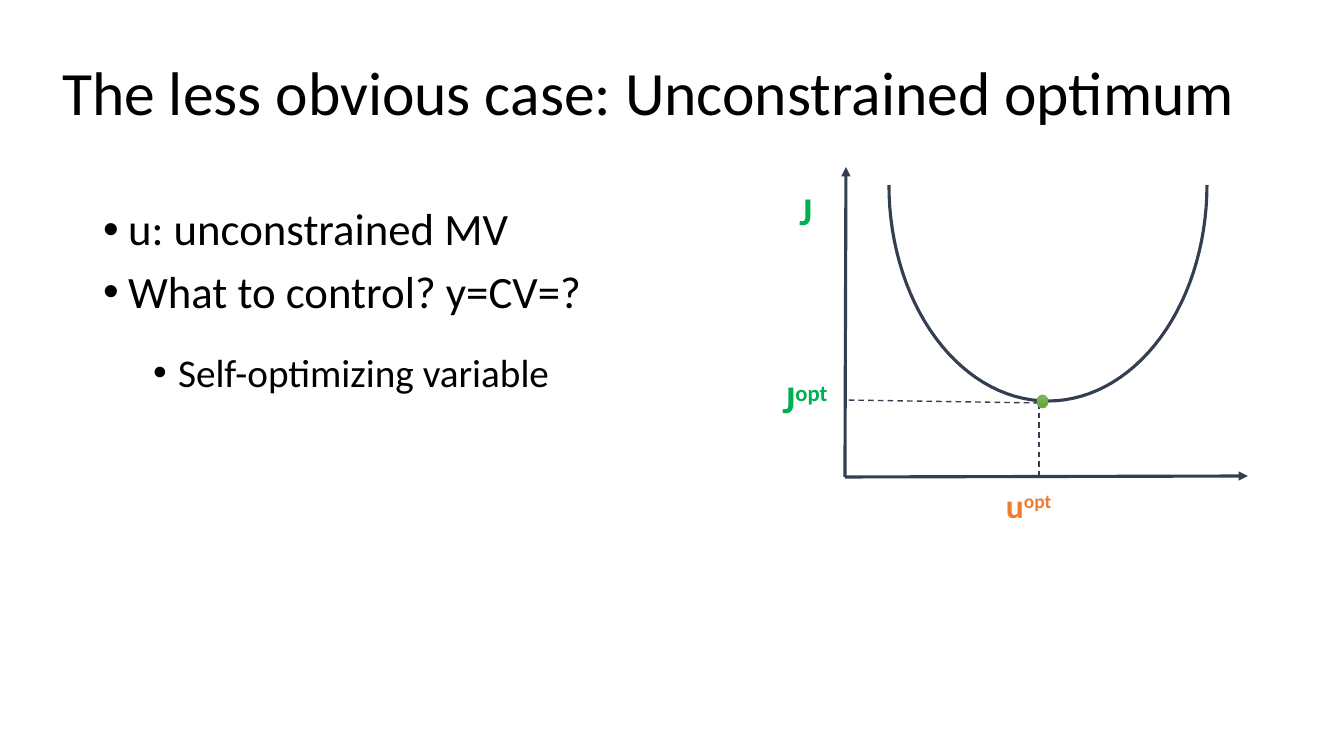
from math import cos, pi, sin

from lxml.etree import SubElement
from pptx import Presentation
from pptx.dml.color import RGBColor
from pptx.enum.dml import MSO_LINE_DASH_STYLE as Dash
from pptx.enum.shapes import MSO_CONNECTOR as Connector, MSO_SHAPE as Shape
from pptx.enum.text import MSO_ANCHOR as Anchor, MSO_AUTO_SIZE as AutoSize, PP_ALIGN as Align
from pptx.oxml.ns import qn
from pptx.util import Emu, Pt

BLACK = RGBColor(0x00, 0x00, 0x00)
NAVY = RGBColor(0x33, 0x3F, 0x50)
GREEN = RGBColor(0x00, 0xB0, 0x50)
ORANGE = RGBColor(0xED, 0x7D, 0x31)
DOT_EDGE = RGBColor(0x70, 0xAD, 0x47)
DOT_TOP = RGBColor(0x81, 0xB8, 0x61)
DOT_BOTTOM = RGBColor(0x62, 0xA3, 0x36)

EMU_PER_PX = 914400 / 100.8


def px(length):
    return Emu(round(length * EMU_PER_PX))


class SlideBuilder:
    font = "Calibri"

    def __init__(self, slide):
        self.slide = slide
        self.shapes = slide.shapes

    def add_run(self, paragraph, text, size, color, bold=False, raised=False):
        run = paragraph.add_run()
        run.text = text
        run.font.name = self.font
        run.font.size = Pt(size)
        run.font.bold = bold
        run.font.color.rgb = color
        if raised:
            run._r.get_or_add_rPr().set("baseline", "30000")

    def place(self, placeholder, left, top, width, height, anchor):
        placeholder.left, placeholder.top = px(left), px(top)
        placeholder.width, placeholder.height = px(width), px(height)
        frame = placeholder.text_frame
        frame.word_wrap = True
        frame.auto_size = AutoSize.NONE
        frame.vertical_anchor = anchor
        return frame

    def title(self, text, *box):
        paragraph = self.place(self.shapes.title, *box, Anchor.MIDDLE).paragraphs[0]
        paragraph.alignment = Align.LEFT
        paragraph.line_spacing = 0.9
        self.add_run(paragraph, text, 44, BLACK)

    def bullets(self, items, *box):
        frame = self.place(self.slide.placeholders[1], *box, Anchor.TOP)
        for index, (text, level, size, spacing, before) in enumerate(items):
            paragraph = frame.add_paragraph() if index else frame.paragraphs[0]
            paragraph.level = level
            paragraph.line_spacing = spacing
            paragraph.space_before = Pt(before)
            props = paragraph._p.get_or_add_pPr()
            props.set("marL", str(px(25 + 50 * level)))
            props.set("indent", str(-px(25)))
            SubElement(props, qn("a:buFont"), typeface="Arial")
            SubElement(props, qn("a:buChar"), char="•")
            self.add_run(paragraph, text, size, BLACK)

    def label(self, base, exponent, size, color, left, top, width, height, align=Align.CENTER):
        frame = self.shapes.add_textbox(px(left), px(top), px(width), px(height)).text_frame
        frame.word_wrap = True
        paragraph = frame.paragraphs[0]
        paragraph.alignment = align
        self.add_run(paragraph, base, size, color, bold=True)
        if exponent:
            self.add_run(paragraph, exponent, size, color, bold=True, raised=True)

    def line(self, start, end, width, dash=None, arrow=False):
        connector = self.shapes.add_connector(Connector.STRAIGHT, *map(px, start + end))
        connector.line.color.rgb = NAVY
        connector.line.width = Pt(width)
        if dash:
            connector.line.dash_style = dash
        if arrow:
            SubElement(connector.line._get_or_add_ln(), qn("a:tailEnd"), type="triangle")
        SubElement(connector._element.spPr, qn("a:effectLst"))

    def bowl(self, center_x, top, radius_x, radius_y, steps=60):
        angles = [pi * step / steps for step in range(steps + 1)]
        points = [(px(center_x + radius_x * cos(a)), px(top + radius_y * sin(a))) for a in angles]
        builder = self.shapes.build_freeform(*points[0])
        builder.add_line_segments(points[1:], close=False)
        curve = builder.convert_to_shape()
        curve.shadow.inherit = False
        curve.fill.background()
        curve.line.color.rgb = NAVY
        curve.line.width = Pt(2.25)

    def dot(self, left, top, width, height):
        dot = self.shapes.add_shape(Shape.OVAL, px(left), px(top), px(width), px(height))
        dot.shadow.inherit = False
        dot.fill.gradient()
        dot.fill.gradient_angle = 270
        for stop, color in zip(dot.fill.gradient_stops, (DOT_TOP, DOT_BOTTOM)):
            stop.color.rgb = color
        dot.line.color.rgb = DOT_EDGE
        dot.line.width = Pt(0.5)


def main():
    deck = Presentation()
    deck.slide_width, deck.slide_height = px(1344), px(756)
    page = SlideBuilder(deck.slides.add_slide(deck.slide_layouts[1]))

    # Title and list
    page.title("The less obvious case: Unconstrained optimum", 52, 23, 1303, 146)
    page.bullets([
        ("u: unconstrained MV", 0, 32, 0.9, 10),
        ("What to control? y=CV=?", 0, 32, 0.9, 10),
        ("Self-optimizing variable", 1, 28, 1.5, 5),
    ], 93, 202, 1159, 480)

    # Axes
    origin = (845, 477)
    page.line(origin, (846, 167), 2.25, arrow=True)
    page.line(origin, (1248, 476), 2.25, arrow=True)

    # Cost curve
    page.bowl(1048, 185, 159, 216)

    # Guides to the optimum
    optimum = (1039, 403)
    page.line(optimum, (1039, 480), 1, dash=Dash.DASH)
    page.line(optimum, (845, 400), 1, dash=Dash.DASH)
    page.dot(1037, 395, 11, 13)

    # Axis labels
    page.label("J", "", 28, GREEN, 730, 181, 152, 99)
    page.label("J", "opt", 28, GREEN, 729, 369, 152, 99)
    page.label("u", "opt", 24, ORANGE, 996, 480, 77, 56, Align.LEFT)

    deck.save("out.pptx")


if __name__ == "__main__":
    main()
